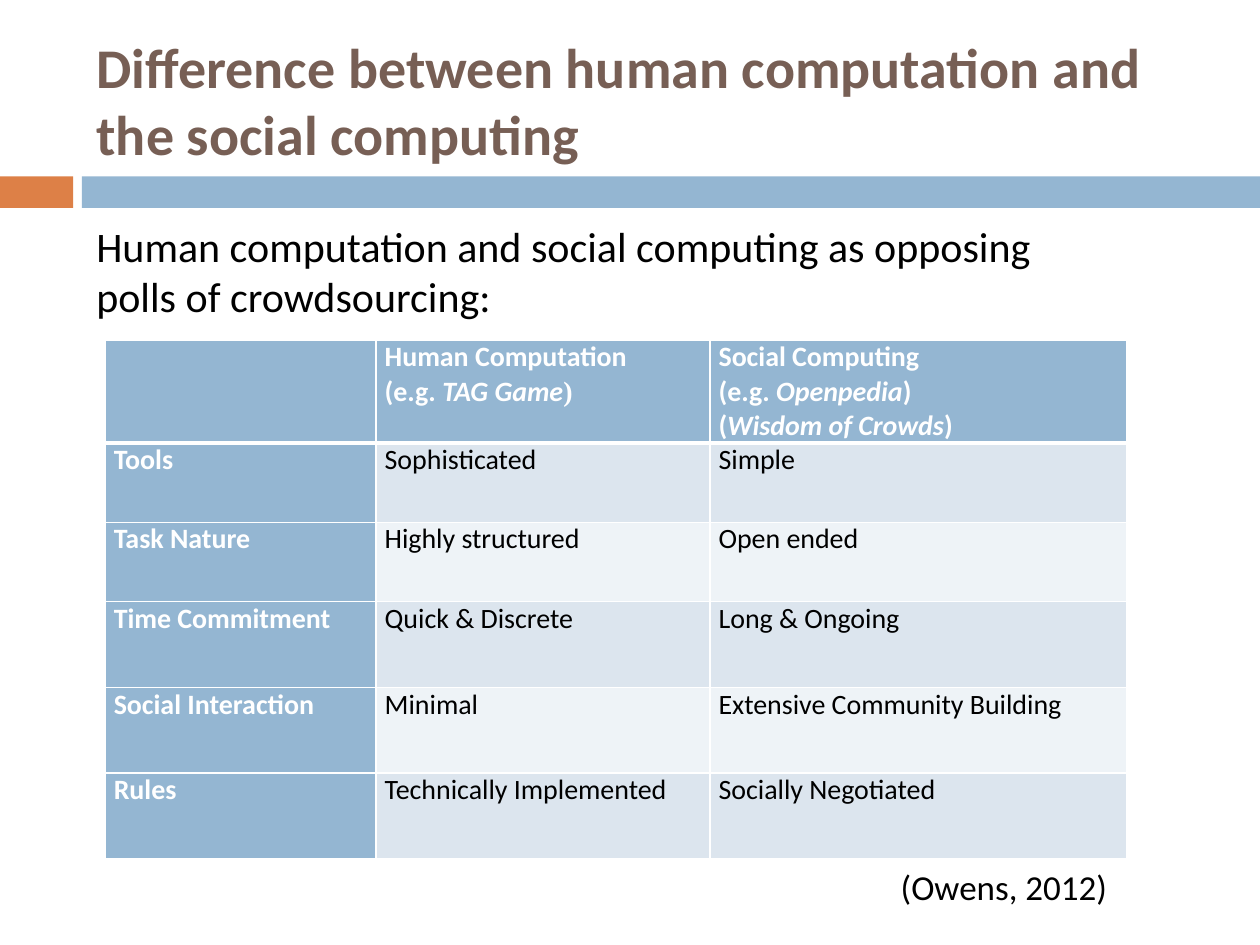
from dataclasses import dataclass
from typing import NamedTuple

from lxml.etree import SubElement
from pptx import Presentation
from pptx.dml.color import RGBColor
from pptx.enum.shapes import MSO_SHAPE
from pptx.enum.text import MSO_ANCHOR, MSO_AUTO_SIZE, PP_ALIGN
from pptx.oxml.ns import qn
from pptx.util import Emu, Inches, Pt


@dataclass(frozen=True)
class Theme:
    font: str = "Calibri"
    serif: str = "Times New Roman"
    title: str = "775F55"
    accent: str = "DD8047"
    blue: str = "94B6D2"
    bands: tuple = ("DCE5EE", "EEF3F7")
    white: str = "FFFFFF"
    black: str = "000000"
    title_size: int = 32
    body_size: int = 24
    source_size: int = 20
    table_size: int = 16


class Box(NamedTuple):
    """Position and size in inches."""
    left: float
    top: float
    width: float
    height: float

    def lengths(self) -> list[Emu]:
        return [Inches(value) for value in self]


class Run(NamedTuple):
    text: str
    italic: bool = False
    font: str = ""


class Bar(NamedTuple):
    box: Box
    color: str


THEME = Theme()
WIDTH, HEIGHT = 10, 7.5
MARGIN = WIDTH / 15
BAR_TOP, BAR_HEIGHT, BAR_SPLIT, BAR_GAP = 1.4, 0.25, 0.58, 0.07
BAR_START = BAR_SPLIT + BAR_GAP
BARS = [
    Bar(Box(0, BAR_TOP, BAR_SPLIT, BAR_HEIGHT), THEME.accent),
    Bar(Box(BAR_START, BAR_TOP, WIDTH - BAR_START, BAR_HEIGHT), THEME.blue),
]
COLUMNS = [2.15, 2.65, 3.31]
ROWS = [0.63] * 3 + [0.68] * 3
HEADER = [
    [],
    [[Run("Human Computation")],
     [Run("(e.g. "), Run("TAG Game", True), Run(")", font=THEME.serif)]],
    [[Run("Social Computing")],
     [Run("(e.g. "), Run("Openpedia", True), Run(")")],
     [Run("("), Run("Wisdom of Crowds", True), Run(")")]],
]
COMPARISON = [
    ("Tools", "Sophisticated", "Simple"),
    ("Task Nature", "Highly structured", "Open ended"),
    ("Time Commitment", "Quick & Discrete", "Long & Ongoing"),
    ("Social Interaction", "Minimal", "Extensive Community Building"),
    ("Rules", "Technically Implemented", "Socially Negotiated"),
]


def add_run(paragraph, run: Run, size: int, color: str, bold: bool = False) -> None:
    text_run = paragraph.add_run()
    text_run.text = run.text
    font = text_run.font
    font.name = run.font or THEME.font
    font.size = Pt(size)
    font.bold = bold
    font.italic = run.italic
    font.color.rgb = RGBColor.from_string(color)


def add_bar(slide, bar: Bar) -> None:
    shape = slide.shapes.add_shape(MSO_SHAPE.RECTANGLE, *bar.box.lengths())
    shape.shadow.inherit = False
    shape.fill.solid()
    shape.fill.fore_color.rgb = RGBColor.from_string(bar.color)
    shape.line.fill.background()


def add_text(slide, box: Box, text: str, size: int, wrap: bool = True) -> None:
    frame = slide.shapes.add_textbox(*box.lengths()).text_frame
    frame.word_wrap = wrap
    frame.auto_size = MSO_AUTO_SIZE.SHAPE_TO_FIT_TEXT
    add_run(frame.paragraphs[0], Run(text), size, THEME.black)


def set_borders(cell, top: int = 1, bottom: int = 1) -> None:
    properties = cell._tc.get_or_add_tcPr()
    for side, width in (("L", 1), ("R", 1), ("T", top), ("B", bottom)):
        line = SubElement(properties, qn(f"a:ln{side}"), w=str(Pt(width)))
        fill = SubElement(line, qn("a:solidFill"))
        SubElement(fill, qn("a:srgbClr"), val=THEME.white)


def fill_cell(cell, lines: list[list[Run]], fill: str, heading: bool) -> None:
    cell.margin_left = cell.margin_right = Inches(0.07)
    cell.margin_top = cell.margin_bottom = 0
    cell.fill.solid()
    cell.fill.fore_color.rgb = RGBColor.from_string(fill)
    frame = cell.text_frame
    for index, runs in enumerate(lines):
        paragraph = frame.add_paragraph() if index else frame.paragraphs[0]
        paragraph.alignment = PP_ALIGN.JUSTIFY
        for run in runs:
            add_run(paragraph, run, THEME.table_size,
                    THEME.white if heading else THEME.black, heading)


def add_comparison(slide, left: float, top: float) -> None:
    box = Box(left, top, sum(COLUMNS), sum(ROWS))
    table = slide.shapes.add_table(len(ROWS), len(COLUMNS), *box.lengths()).table
    table.first_col = True
    for column, width in zip(table.columns, COLUMNS):
        column.width = Inches(width)
    for row, height in zip(table.rows, ROWS):
        row.height = Inches(height)
    content = [HEADER] + [[[[Run(text)]] for text in row] for row in COMPARISON]
    for r, row in enumerate(content):
        for c, lines in enumerate(row):
            heading = r == 0 or c == 0
            cell = table.cell(r, c)
            set_borders(cell, top=3 if r == 1 else 1, bottom=3 if r == 0 else 1)
            fill = THEME.blue if heading else THEME.bands[(r - 1) % 2]
            fill_cell(cell, lines, fill, heading)


def set_title(slide, box: Box, text: str) -> None:
    title = slide.shapes.title
    title.left, title.top, title.width, title.height = box.lengths()
    frame = title.text_frame
    frame.word_wrap = True
    frame.auto_size = MSO_AUTO_SIZE.NONE
    frame.vertical_anchor = MSO_ANCHOR.MIDDLE
    paragraph = frame.paragraphs[0]
    paragraph.alignment = PP_ALIGN.LEFT
    add_run(paragraph, Run(text), THEME.title_size, THEME.title, bold=True)


def main() -> None:
    presentation = Presentation()
    presentation.slide_width, presentation.slide_height = Inches(WIDTH), Inches(HEIGHT)
    slide = presentation.slides.add_slide(presentation.slide_layouts.get_by_name("Title Only"))

    # Title and the two-part bar below it
    set_title(slide, Box(MARGIN, 0.25, 8.92, 1.08),
              "Difference between human computation and the social computing")
    for bar in BARS:
        add_bar(slide, bar)

    # Comparison table with its source and introduction
    add_comparison(slide, WIDTH / 12, 2.7)
    add_text(slide, Box(7.05, 6.82, 2.12, 0.44), "(Owens, 2012)",
             THEME.source_size, wrap=False)
    add_text(slide, Box(MARGIN, 1.7, 7.87, 0.91),
             "Human computation and social computing as opposing polls of crowdsourcing:",
             THEME.body_size)

    presentation.save("out.pptx")


if __name__ == "__main__":
    main()
